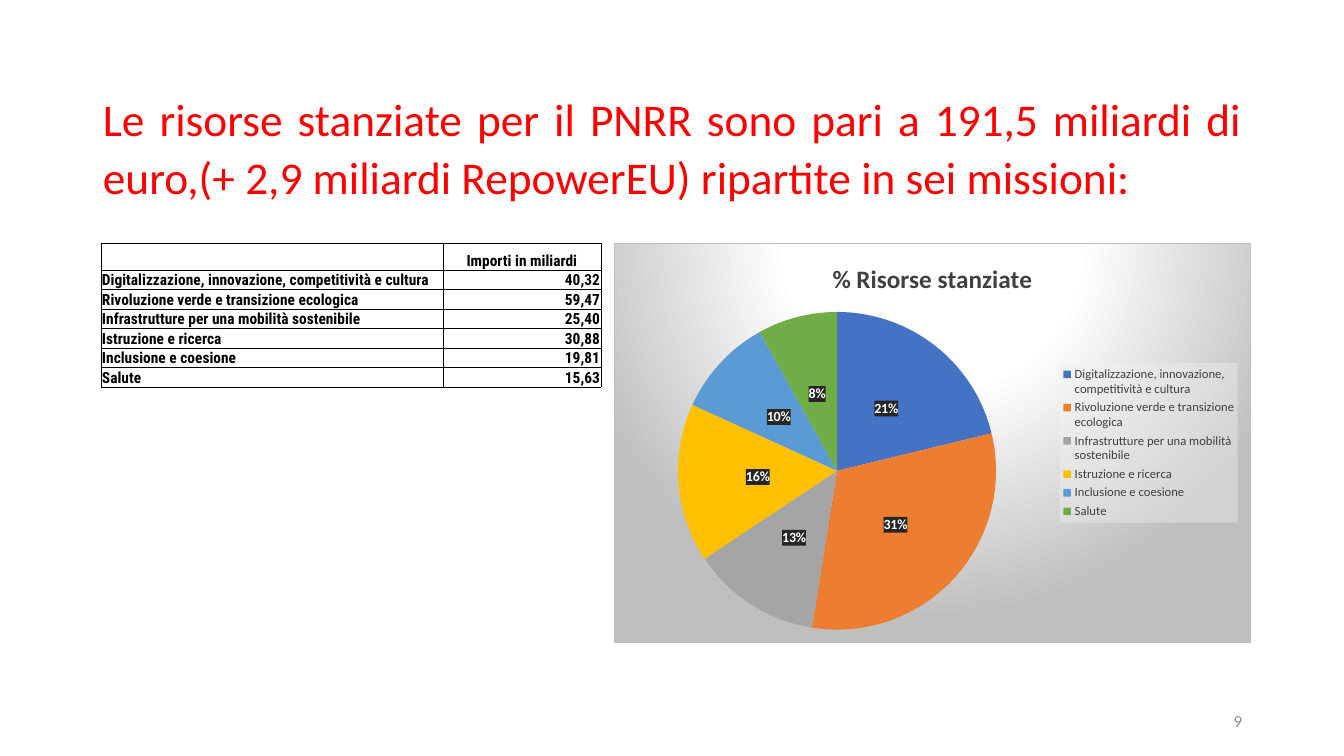
from lxml.etree import fromstring
from pptx import Presentation
from pptx.chart.data import CategoryChartData
from pptx.dml.color import RGBColor
from pptx.enum.chart import XL_CHART_TYPE as CT, XL_LABEL_POSITION as LP, XL_LEGEND_POSITION as LG
from pptx.enum.text import MSO_ANCHOR as MA, PP_ALIGN as PA
from pptx.oxml.ns import nsdecls, qn
from pptx.util import Emu, Pt

EMU_PER_PX = 914400 / 100.8
MISSIONS = [
    ("Digitalizzazione, innovazione, competitività e cultura", "40,32", 21, "4472C4"),
    ("Rivoluzione verde e transizione ecologica", "59,47", 31, "ED7D31"),
    ("Infrastrutture per una mobilità sostenibile", "25,40", 13, "A5A5A5"),
    ("Istruzione e ricerca", "30,88", 16, "FFC000"),
    ("Inclusione e coesione", "19,81", 10, "5B9BD5"),
    ("Salute", "15,63", 8, "70AD47"),
]


def px(n):
    return Emu(round(n * EMU_PER_PX))


def rgb(color):
    return RGBColor.from_string(color)


def xml(text):
    head, tail = text.split(">", 1) if "/>" not in text.split(">", 1)[0] + ">" else (text[:-2], "")
    return fromstring(f"{head} {nsdecls('a', 'c')}>{tail}")


def solid(color, alpha):
    return xml(f'<c:spPr><a:solidFill><a:srgbClr val="{color}"><a:alpha val="{alpha * 1000}"/>'
               '</a:srgbClr></a:solidFill></c:spPr>')


def layout(x, y, w, h, inner=False):
    target = '<c:layoutTarget val="inner"/>' if inner else ""
    modes = '<c:xMode val="edge"/><c:yMode val="edge"/>'
    box = "".join(f'<c:{k} val="{v}"/>' for k, v in zip("xywh", (x, y, w, h)))
    return xml(f"<c:layout><c:manualLayout>{target}{modes}{box}</c:manualLayout></c:layout>")


class Deck:
    """Holds the style and the current slide."""

    font = "Calibri"
    table_font = "Roboto Condensed"

    def __init__(self):
        self.prs = Presentation()
        self.prs.slide_width, self.prs.slide_height = px(1344), px(756)
        self.s = self.prs.slides.add_slide(self.prs.slide_layouts[6])

    def style(self, font, size, color, bold=False, name=None):
        font.name, font.size, font.bold = name or self.font, Pt(size), bold
        font.color.rgb = rgb(color)

    def text(self, box, text, size, color, align, anchor=MA.TOP):
        tf = self.s.shapes.add_textbox(*map(px, box)).text_frame
        tf.word_wrap, tf.vertical_anchor = True, anchor
        p = tf.paragraphs[0]
        p.text, p.alignment = text, align
        self.style(p.font, size, color)
        return p

    def cell(self, cell, text, align):
        cell.fill.background()
        cell.vertical_anchor = MA.BOTTOM
        cell.margin_left = cell.margin_right = cell.margin_top = px(1)
        cell.margin_bottom = 0
        p = cell.text_frame.paragraphs[0]
        p.text, p.alignment = text, align
        self.style(p.font, 11, "000000", True, self.table_font)
        pr = cell._tc.get_or_add_tcPr()
        for i, side in enumerate("LRTB"):
            pr.insert(i, xml(f'<a:ln{side} w="6350"><a:solidFill><a:srgbClr val="000000"/>'
                             f'</a:solidFill></a:ln{side}>'))

    def table(self, box, widths, heights, rows):
        table = self.s.shapes.add_table(len(rows), len(widths), *map(px, box)).table
        table.first_row = table.horz_banding = False
        for col, width in zip(table.columns, widths):
            col.width = px(width)
        for i, (row, height) in enumerate(zip(rows, heights)):
            table.rows[i].height = px(height)
            for j, text in enumerate(row):
                align = PA.LEFT if j == 0 else PA.RIGHT if i else PA.CENTER
                self.cell(table.cell(i, j), text, align)

    def pie(self, box, title, names, values, colors):
        data = CategoryChartData()
        data.categories = names
        data.add_series("Series 1", values)
        chart = self.s.shapes.add_chart(CT.PIE, *map(px, box), data).chart
        self.style(chart.font, 10, "000000")
        chart.has_title = True
        p = chart.chart_title.text_frame.paragraphs[0]
        p.text = title
        self.style(p.font, 18, "404040", True)
        self.pie_plot(chart, colors)
        self.pie_legend(chart)
        chart._chartSpace.find(qn("c:chart")).addnext(xml(
            '<c:spPr><a:gradFill><a:gsLst><a:gs pos="0"><a:srgbClr val="FFFFFF"/></a:gs>'
            '<a:gs pos="39000"><a:srgbClr val="FFFFFF"/></a:gs>'
            '<a:gs pos="100000"><a:srgbClr val="BFBFBF"/></a:gs></a:gsLst><a:path path="circle">'
            '<a:fillToRect l="50000" t="-80000" r="50000" b="180000"/></a:path></a:gradFill>'
            '<a:ln w="9525"><a:solidFill><a:srgbClr val="BFBFBF"/></a:solidFill></a:ln></c:spPr>'))

    def pie_plot(self, chart, colors):
        plot = chart.plots[0]
        plot.vary_by_categories = True
        for i, color in enumerate(colors):
            fill = plot.series[0].points[i].format.fill
            fill.solid()
            fill.fore_color.rgb = rgb(color)
        labels = plot.series[0].data_labels
        labels.show_percentage, labels.show_value = True, False
        labels.number_format, labels.number_format_is_linked = "0%", False
        labels.position = LP.CENTER
        self.style(labels.font, 10, "FFFFFF", True)
        labels._element.find(qn("c:numFmt")).addnext(solid("262626", 75))
        area = chart._chartSpace.find(f".//{qn('c:plotArea')}")
        for old in area.findall(qn("c:layout")):
            area.remove(old)
        area.insert(0, layout(0.1, 0.17, 0.5, 0.8, True))

    def pie_legend(self, chart):
        chart.has_legend = True
        legend = chart.legend
        legend.position, legend.include_in_layout = LG.RIGHT, False
        self.style(legend.font, 9, "404040")
        el = legend._element
        for old in el.findall(qn("c:layout")):
            el.remove(old)
        el.find(qn("c:legendPos")).addnext(layout(0.7, 0.3, 0.28, 0.4))
        el.find(qn("c:overlay")).addnext(solid("F2F2F2", 39))


def main():
    deck = Deck()
    names, amounts, shares, colors = zip(*MISSIONS)
    p = deck.text((93, 82, 1159, 141),
                  "Le risorse stanziate per il PNRR sono pari a 191,5 miliardi di euro,"
                  "(+ 2,9 miliardi RepowerEU) ripartite in sei missioni:",
                  32.4, "FF0000", PA.JUSTIFY)
    p.line_spacing, p.space_before, p.space_after = 1.07, Pt(10), Pt(8)
    deck.text((950, 701, 302, 40), "9", 12, "8C8C8C", PA.RIGHT, MA.MIDDLE)
    deck.pie((614, 243, 637, 400), "% Risorse stanziate", names, shares, colors)
    rows = [("", "Importi in miliardi"), *zip(names, amounts)]
    deck.table((101, 243, 500, 141), (342, 158), [27] + [19] * len(names), rows)
    deck.prs.save("out.pptx")


if __name__ == "__main__":
    main()
